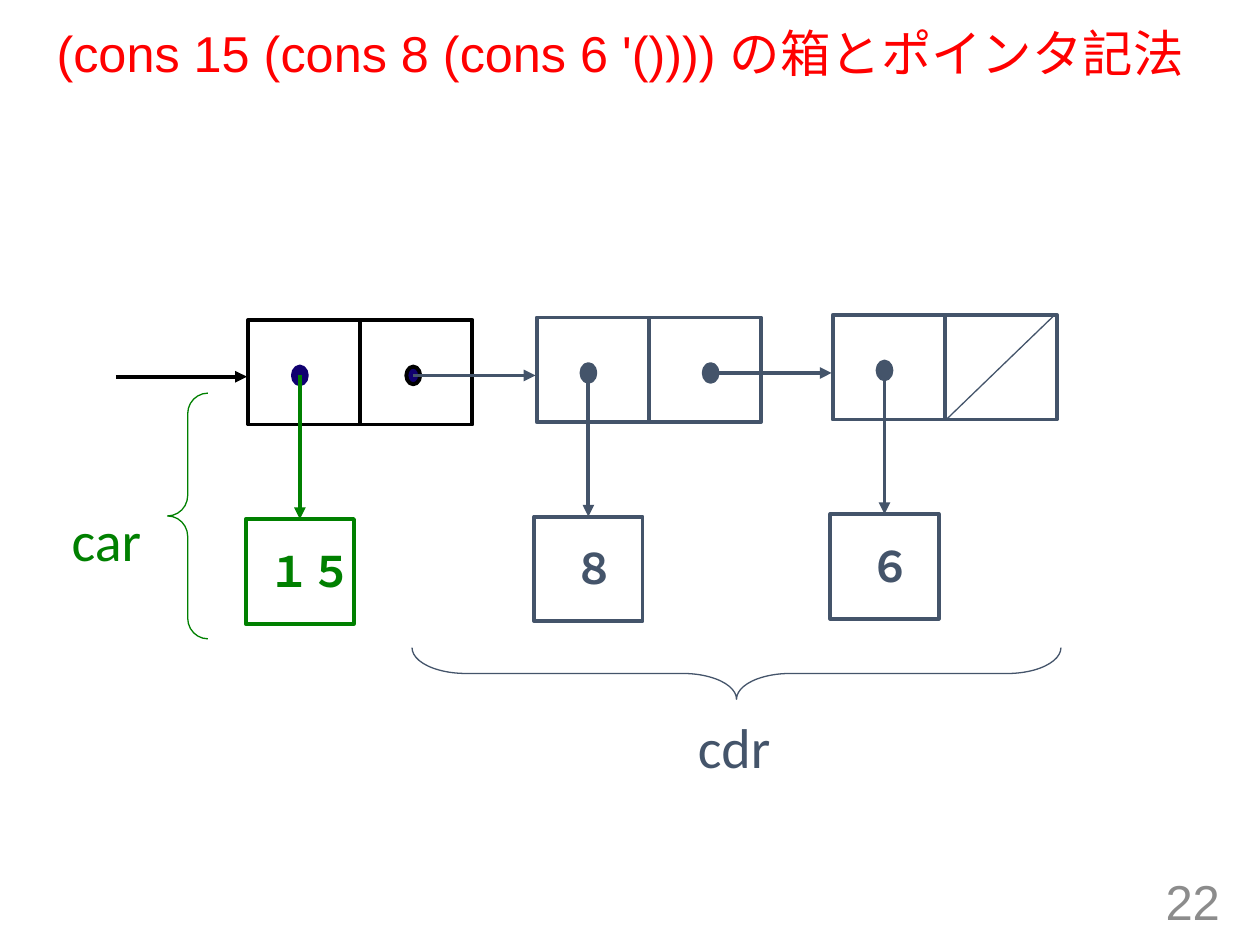
from dataclasses import dataclass

from lxml import etree
from pptx import Presentation
from pptx.dml.color import RGBColor
from pptx.enum import shapes, text
from pptx.oxml import ns
from pptx.util import Inches, Pt


@dataclass(frozen=True)
class Theme:
    black: str = "000000"
    navy: str = "100070"
    green: str = "008000"
    slate: str = "44546A"
    red: str = "FF0000"
    grey: str = "8C8C8C"
    heading_font: str = "Arial"
    body_font: str = "Calibri"
    title_size: float = 28.8
    value_size: float = 24
    label_size: float = 32
    number_size: float = 28
    thick: float = 2.25
    thin: float = 0.75


THEME = Theme()
CELL_W, CELL_H = 1.78, 0.83
VALUE_W, VALUE_H = 0.86, 0.83
DOT_W, DOT_H = 0.11, 0.14
CAR_X, DOT_Y, VALUE_Y = 0.41, 0.44, 1.58  # offsets from a cell's corner


def add_outline(slide, kind, box, color, width=THEME.thick, fill=None):
    sp = slide.shapes.add_shape(kind, *map(Inches, box))
    sp.shadow.inherit = False
    if fill:
        sp.fill.solid()
        sp.fill.fore_color.rgb = RGBColor.from_string(fill)
    else:
        sp.fill.background()
    sp.line.color.rgb = RGBColor.from_string(color)
    sp.line.width = Pt(width)
    return sp


def add_line(slide, start, end, color, width=THEME.thick, arrow=False):
    line = slide.shapes.add_connector(
        shapes.MSO_CONNECTOR.STRAIGHT, *map(Inches, (*start, *end)))
    line.line.color.rgb = RGBColor.from_string(color)
    line.line.width = Pt(width)
    if arrow:
        etree.SubElement(line.line._get_or_add_ln(), ns.qn("a:tailEnd"), type="triangle")
    etree.SubElement(line._element.spPr, ns.qn("a:effectLst"))
    return line


def add_text(slide, box, words, size, color, font=THEME.body_font, bold=False,
             align=text.PP_ALIGN.LEFT, anchor=text.MSO_ANCHOR.TOP, wrap=False):
    tf = slide.shapes.add_textbox(*map(Inches, box)).text_frame
    tf.word_wrap = wrap
    tf.vertical_anchor = anchor
    p = tf.paragraphs[0]
    p.alignment = align
    r = p.add_run()
    r.text = words
    r.font.size = Pt(size)
    r.font.name = font
    r.font.bold = bold
    r.font.color.rgb = RGBColor.from_string(color)
    return p


def add_dot(slide, x, y, fill, color):
    add_outline(slide, shapes.MSO_SHAPE.OVAL,
                (x - DOT_W / 2, y - DOT_H / 2, DOT_W, DOT_H), color, fill=fill)


def add_cell(slide, x, y, color, car_color, dot_fill, dot_line):
    """Two-part cons cell with its car pointer and the value box below."""
    rect = shapes.MSO_SHAPE.RECTANGLE
    add_outline(slide, rect, (x, y, CELL_W, CELL_H), color)
    middle = x + CELL_W / 2
    add_line(slide, (middle, y), (middle, y + CELL_H), color)

    car_x, dot_y, value_y = x + CAR_X, y + DOT_Y, y + VALUE_Y
    add_dot(slide, car_x, dot_y, dot_fill, dot_line)
    value = add_outline(slide, rect, (car_x - VALUE_W / 2, value_y, VALUE_W, VALUE_H),
                        car_color)
    pointer = add_line(slide, (car_x, dot_y), (car_x, value_y), car_color, arrow=True)
    pointer.end_connect(value, 0)


def add_value(slide, x, y, width, words, color):
    add_text(slide, (x, y, width, 0.51), words, THEME.value_size, color, bold=True)


def add_brace(slide, box, color, bend):
    sp = add_outline(slide, shapes.MSO_SHAPE.RIGHT_BRACE, box, color, THEME.thin)
    sp.adjustments[0] = bend
    return sp


def main():
    t = THEME
    prs = Presentation()
    prs.slide_width, prs.slide_height = Inches(10), Inches(7.5)
    s = prs.slides.add_slide(prs.slide_layouts[6])

    # Cons cells and the values they hold
    add_cell(s, 1.97, 2.54, t.black, t.green, t.navy, t.navy)
    add_value(s, 2.03, 4.28, 0.88, "１５", t.green)
    for x, y, words in ((4.26, 2.52, "８"), (6.61, 2.5, "６")):
        add_cell(s, x, y, t.slate, t.slate, t.slate, t.slate)
        add_value(s, x + 0.19, y + 1.74, 0.54, words, t.slate)

    # Entry pointer, cdr pointers and the empty-list slash
    add_line(s, (0.92, 2.99), (1.96, 2.99), t.black, arrow=True)
    for x, y, end_x, fill, color in ((3.28, 2.98, 4.25, t.navy, t.black),
                                     (5.64, 2.96, 6.6, t.slate, t.slate)):
        add_dot(s, x, y, fill, color)
        add_line(s, (x, y), (end_x, y), t.slate, arrow=True)
    add_line(s, (8.37, 2.5), (7.51, 3.33), t.slate, t.thin)

    # Braces and their labels
    car = add_brace(s, (1.33, 3.12, 0.32, 1.95), t.green, 0.51)
    car._element.spPr.find(ns.qn("a:xfrm")).set("flipH", "1")
    add_text(s, (0.47, 3.96, 0.76, 0.64), "car", t.label_size, t.green)
    cdr = add_brace(s, (5.64, 2.77, 0.41, 5.15), t.slate, 1.04)
    cdr.rotation = 90
    add_text(s, (5.44, 5.61, 0.78, 0.64), "cdr", t.label_size, t.slate)

    # Title and slide number
    title = add_text(s, (0.35, 0.19, 9.25, 0.51),
                     "(cons 15 (cons 8 (cons 6 '()))) の箱とポインタ記法",
                     t.title_size, t.red, t.heading_font, anchor=text.MSO_ANCHOR.MIDDLE)
    title.line_spacing = 0.9
    add_text(s, (7.53, 6.95, 2.25, 0.4), "22", t.number_size, t.grey, t.heading_font,
             align=text.PP_ALIGN.RIGHT, anchor=text.MSO_ANCHOR.MIDDLE, wrap=True)

    prs.save("out.pptx")


if __name__ == "__main__":
    main()
